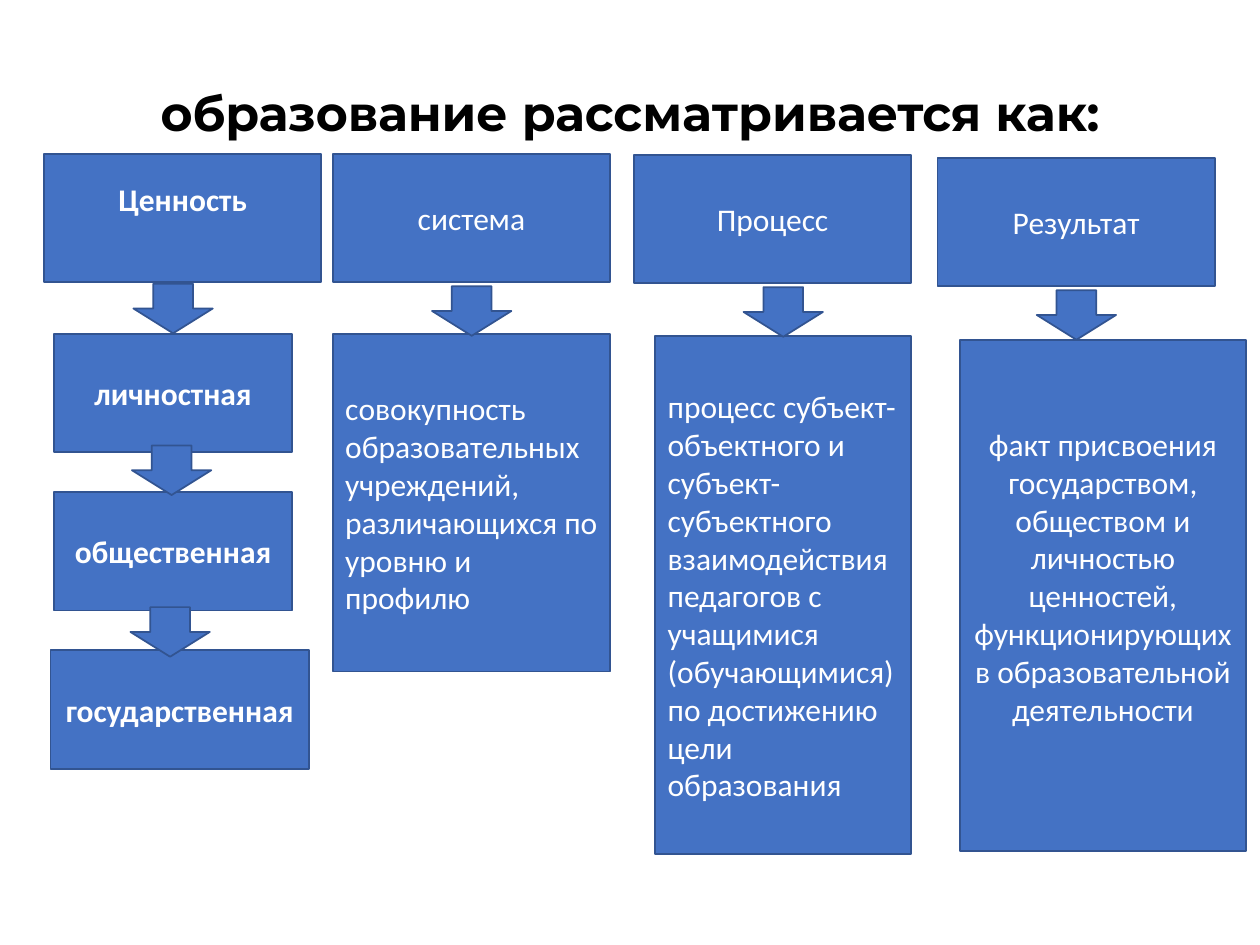
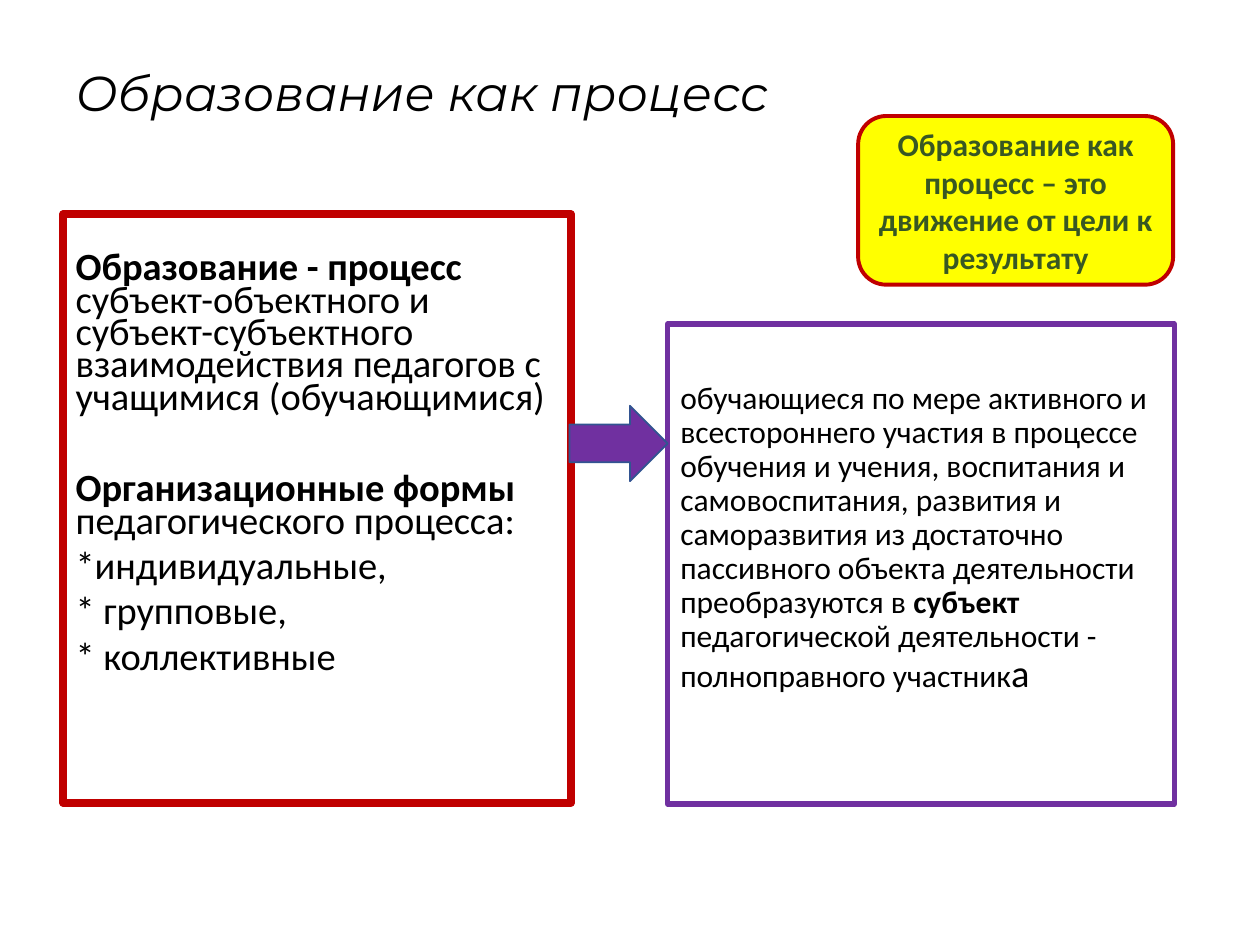
from pptx import Presentation
from pptx.dml.color import RGBColor
from pptx.enum import shapes, text
from pptx.oxml import ns
from pptx.util import Cm, Pt

BLUE = RGBColor(0x44, 0x72, 0xC4)
DARK_BLUE = RGBColor(0x32, 0x54, 0x91)
WHITE = RGBColor(0xFF, 0xFF, 0xFF)
BLACK = RGBColor(0x00, 0x00, 0x00)
RED = RGBColor(0xC0, 0x00, 0x00)
PURPLE = RGBColor(0x70, 0x30, 0xA0)
YELLOW = RGBColor(0xFF, 0xFF, 0x00)
GREEN = RGBColor(0x38, 0x57, 0x23)

BODY_FONT = "Calibri"
TITLE_FONT = "Montserrat"
TITLE_ONLY, TWO_CONTENT = 5, 3

PRESET = shapes.MSO_SHAPE
ALIGN = text.PP_ALIGN
ANCHOR = text.MSO_ANCHOR

HEADER_W, HEADER_H = 5.59, 2.59
LOST_LINE = 0.9  # bottom inset that lifts centred text by half a line


def format_run(run, size, color, bold=False, italic=False, font=BODY_FONT):
    run.font.name = font
    run.font.size = Pt(size)
    run.font.color.rgb = color
    run.font.bold = bold
    run.font.italic = italic


def place(placeholder, box):
    placeholder.left, placeholder.top, placeholder.width, placeholder.height = map(Cm, box)


def add_block(slide, box, words="", preset=PRESET.RECTANGLE, fill=BLUE, line=DARK_BLUE,
              line_width=1, color=WHITE, bold=False, align=ALIGN.CENTER, bottom=None):
    """Add a filled preset shape with one paragraph; box is in centimetres."""
    block = slide.shapes.add_shape(preset, *map(Cm, box))
    block.shadow.inherit = False
    block.fill.solid()
    block.fill.fore_color.rgb = fill
    block.line.color.rgb = line
    block.line.width = Pt(line_width)
    if words:
        frame = block.text_frame
        frame.text = words
        frame.word_wrap = True
        frame.vertical_anchor = ANCHOR.MIDDLE
        if bottom:
            frame.margin_bottom = Cm(bottom)
        frame.paragraphs[0].alignment = align
        format_run(frame.paragraphs[0].runs[0], 18, color, bold)


def set_title(slide, box, words, align, bold=False, italic=False, bottom=0.13):
    title = slide.shapes.title
    place(title, box)
    frame = title.text_frame
    frame.text = words
    frame.auto_size = text.MSO_AUTO_SIZE.NONE
    frame.vertical_anchor = ANCHOR.MIDDLE
    frame.margin_bottom = Cm(bottom)
    paragraph = frame.paragraphs[0]
    paragraph.alignment = align
    paragraph.line_spacing = 0.9
    format_run(paragraph.runs[0], 28, BLACK, bold, italic, TITLE_FONT)


def add_down_arrow(slide, left, top):
    add_block(slide, (left, top, 1.6, 1), preset=PRESET.DOWN_ARROW)


def value_column(slide, left, top):
    """Header followed by a chain of three kinds of value."""
    add_block(slide, (left, top, HEADER_W, HEADER_H), "Ценность", bold=True, bottom=LOST_LINE)
    kinds = [("личностная", 0.2, 4.8), ("общественная", 0.2, 4.8),
             ("государственная", 0.13, 5.21)]
    for i, (kind, indent, width) in enumerate(kinds):
        add_block(slide, (left + indent, top + 3.63 + 3.19 * i, width, 2.39), kind, bold=True)
    for i in range(len(kinds)):
        add_down_arrow(slide, left + 1.8 - 0.03 * i, top + 2.62 + 3.26 * i)


def meaning_column(slide, left, top, header, meaning, meaning_box, arrow_indent,
                   align=ALIGN.LEFT, bottom=None):
    """Header, arrow and meaning; meaning_box is relative to the column corner."""
    dx, dy, width, height = meaning_box
    add_block(slide, (left, top, HEADER_W, HEADER_H), header)
    add_block(slide, (left + dx, top + dy, width, height), meaning, align=align, bottom=bottom)
    add_down_arrow(slide, left + arrow_indent, top + 2.67)


def set_body(placeholder, box, line, line_width, spacing, top, paragraphs):
    """Fill a framed body; paragraphs hold (space before, [(words, size, bold)])."""
    place(placeholder, box)
    placeholder.line.color.rgb = line
    placeholder.line.width = Pt(line_width)
    frame = placeholder.text_frame
    frame.auto_size = text.MSO_AUTO_SIZE.NONE
    frame.vertical_anchor = ANCHOR.TOP
    frame.margin_top = Cm(top)
    for i, (before, pieces) in enumerate(paragraphs):
        paragraph = frame.add_paragraph() if i else frame.paragraphs[0]
        paragraph.line_spacing = spacing
        paragraph.space_before = Pt(before)
        properties = paragraph._p.get_or_add_pPr()
        properties.set("marL", "0")
        properties.set("indent", "0")
        properties.append(properties.makeelement(ns.qn("a:buNone"), {}))
        for words, size, bold in pieces:
            run = paragraph.add_run()
            run.text = words
            format_run(run, size, BLACK, bold)


def build_meanings_slide(deck):
    slide = deck.slides.add_slide(deck.slide_layouts[TITLE_ONLY])
    set_title(slide, (1.75, 1.02, 21.9, 3.68), "образование рассматривается как:",
              ALIGN.CENTER, bold=True, bottom=1.2)
    value_column(slide, 0.89, 3.1)
    meaning_column(
        slide, 6.71, 3.1, "система",
        "совокупность образовательных учреждений, различающихся по уровню и профилю",
        (0, 3.63, HEADER_W, 6.81), 2)
    meaning_column(
        slide, 12.78, 3.12, "Процесс",
        "процесс субъект-объектного и субъект-субъектного взаимодействия педагогов "
        "с учащимися (обучающимися) по достижению цели образования",
        (0.43, 3.66, 5.16, 10.44), 2.21)
    meaning_column(
        slide, 18.9, 3.18, "Результат",
        "факт присвоения государством, обществом и личностью ценностей, "
        "функционирующих в образовательной деятельности",
        (0.45, 3.68, 5.77, 10.29), 2, ALIGN.CENTER, LOST_LINE)


def build_process_slide(deck):
    slide = deck.slides.add_slide(deck.slide_layouts[TWO_CONTENT])
    set_title(slide, (1.27, 1.02, 22.38, 1.83), "Образование как процесс",
              ALIGN.LEFT, italic=True)
    _, forms, outcome = slide.placeholders
    set_body(forms, (1.27, 4.32, 10.24, 11.86), RED, 4.5, 0.7, 0.82, [
        (0, [("Образование - процесс ", 22, True),
             ("субъект-объектного и субъект-субъектного взаимодействия педагогов "
              "с учащимися (обучающимися)", 22, False)]),
        (33.8, [("Организационные формы ", 22, True),
                ("педагогического процесса:", 22, False)]),
        (7.5, [("*индивидуальные,", 22, False)]),
        (7.5, [("* групповые,", 22, False)]),
        (7.5, [("* коллективные", 22, False)]),
    ])
    set_body(outcome, (13.46, 6.53, 10.21, 9.68), PURPLE, 3, 0.9, 1.17, [
        (0, [("обучающиеся по мере активного и всестороннего участия в процессе "
              "обучения и учения, воспитания и самовоспитания, развития и саморазвития "
              "из достаточно пассивного объекта деятельности преобразуются в ", 18, False),
             ("субъект", 18, True),
             (" педагогической деятельности - полноправного участник", 18, False),
             ("а", 22, False)]),
    ])
    add_block(slide, (11.48, 8.18, 1.98, 1.52), preset=PRESET.RIGHT_ARROW, fill=PURPLE)
    add_block(slide, (17.3, 2.34, 6.35, 3.4),
              "Образование как процесс – это движение от цели к результату",
              PRESET.ROUNDED_RECTANGLE, YELLOW, RED, 2.25, GREEN, bold=True)


def main():
    deck = Presentation()
    deck.slide_width, deck.slide_height = Cm(25.4), Cm(19.05)
    build_meanings_slide(deck)
    build_process_slide(deck)
    deck.save("out.pptx")


if __name__ == "__main__":
    main()
